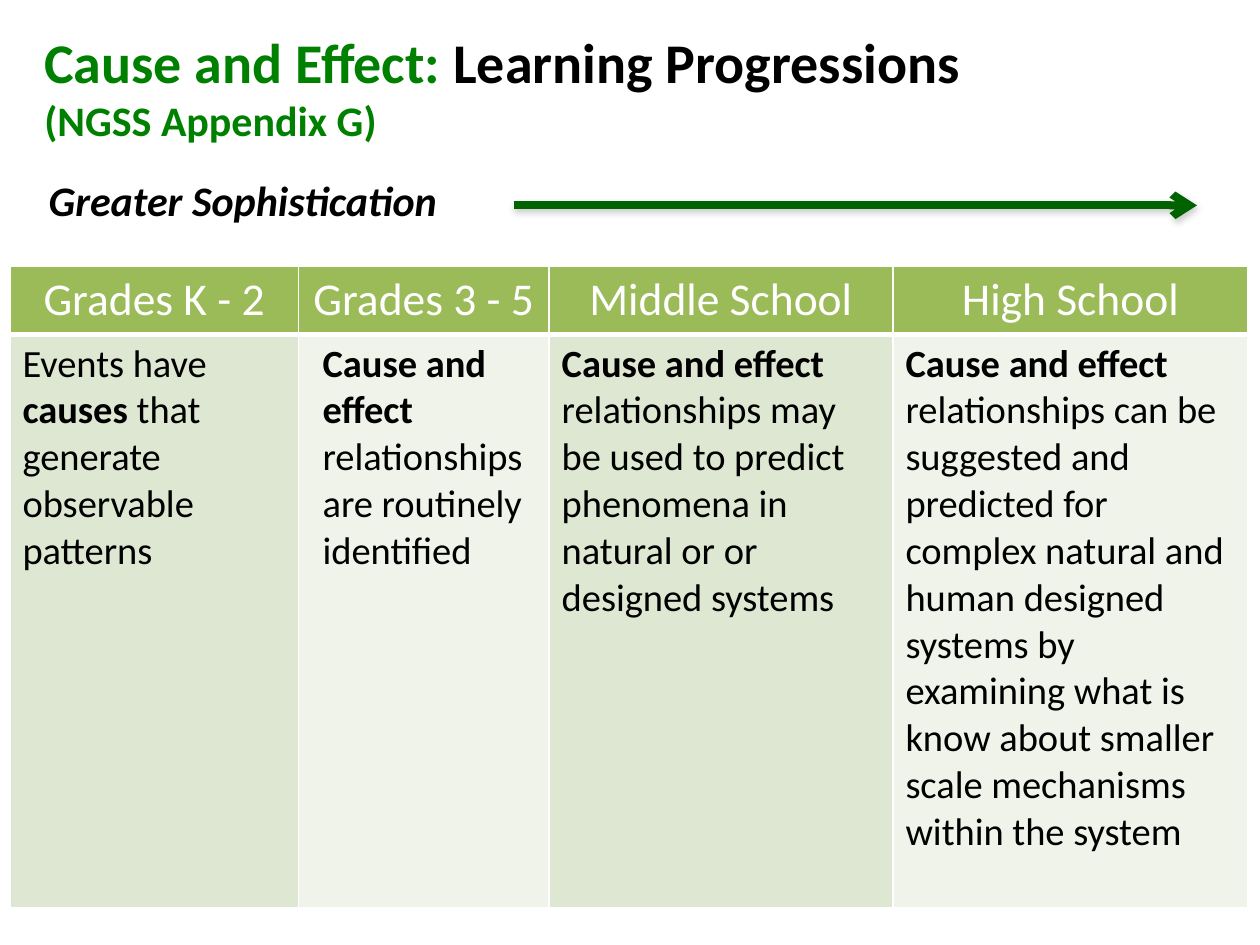
import lxml.etree
import pptx
import pptx.dml.color
import pptx.enum.shapes
import pptx.enum.text
import pptx.oxml.ns
import pptx.util

Cm = pptx.util.Cm
Pt = pptx.util.Pt
RGBColor = pptx.dml.color.RGBColor
PP_ALIGN = pptx.enum.text.PP_ALIGN
qn = pptx.oxml.ns.qn

BLACK = RGBColor(0x00, 0x00, 0x00)
WHITE = RGBColor(0xFF, 0xFF, 0xFF)
TITLE_GREEN = RGBColor(0x00, 0x80, 0x00)
ARROW_GREEN = RGBColor(0x00, 0x63, 0x00)
SHADOW_GRAY = RGBColor(0x80, 0x80, 0x80)
HEADER_GREEN = RGBColor(0x9B, 0xBB, 0x59)
COLUMN_GREENS = (RGBColor(0xDE, 0xE7, 0xD1), RGBColor(0xEF, 0xF3, 0xEA))

FONT = "Calibri"
COLUMN_WIDTHS = (5.82, 5.05, 6.93, 7.16)
HEADER_HEIGHT = 1.37
PROGRESSIONS = (
    ("Grades K - 2", (("Events have ", False), ("causes ", True),
                      ("that generate observable patterns", False)), 0),
    ("Grades 3 - 5", (("Cause and effect ", True),
                      ("relationships are routinely identified", False)), 0.23),
    ("Middle School", (("Cause and effect ", True),
                       ("relationships may be used to predict phenomena in "
                        "natural or or designed systems", False)), 0),
    ("High School", (("Cause and effect ", True),
                     ("relationships can be suggested and predicted for complex "
                      "natural and human designed systems by examining what is "
                      "know about smaller scale mechanisms within the system", False)), 0),
)


def write(paragraph, text, size, color=BLACK, bold=False, italic=False,
          align=PP_ALIGN.LEFT, indent=0):
    """Append formatted text to a paragraph."""
    paragraph.alignment = align
    properties = paragraph._p.get_or_add_pPr()
    properties.set("marL", str(Cm(indent)))
    properties.set("indent", "0")
    run = paragraph.add_run()
    run.text = text
    font = run.font
    font.name, font.size, font.bold, font.italic = FONT, Pt(size), bold, italic
    font.color.rgb = color


def style_cell(cell, fill, top, bottom):
    """Give a cell white borders and a solid fill."""
    properties = cell._tc.get_or_add_tcPr()
    for side, width in (("L", 1), ("R", 1), ("T", top), ("B", bottom)):
        border = lxml.etree.SubElement(properties, qn(f"a:ln{side}"), w=str(Pt(width)))
        solid = lxml.etree.SubElement(border, qn("a:solidFill"))
        lxml.etree.SubElement(solid, qn("a:srgbClr"), val=str(WHITE))
    cell.fill.solid()
    cell.fill.fore_color.rgb = fill


def add_heading(slide, left, top, width, height):
    """Fill the title placeholder with the topic and its reference."""
    heading = slide.shapes.title
    heading.left, heading.top = Cm(left), Cm(top)
    heading.width, heading.height = Cm(width), Cm(height)
    frame = heading.text_frame
    frame.word_wrap = True
    frame.auto_size = pptx.enum.text.MSO_AUTO_SIZE.NONE
    frame.vertical_anchor = pptx.enum.text.MSO_ANCHOR.TOP
    topic, reference = frame.paragraphs[0], frame.add_paragraph()
    write(topic, "Cause and Effect:", 32, color=TITLE_GREEN, bold=True, indent=0.64)
    write(topic, " Learning Progressions", 32, bold=True, indent=0.64)
    write(reference, "(NGSS Appendix G)", 24, color=TITLE_GREEN, bold=True, indent=0.64)


def add_sophistication(slide, left, top, width, height):
    """Place the sophistication label and the arrow to its right."""
    label = slide.shapes.add_textbox(Cm(left), Cm(top), Cm(width), Cm(height))
    label.text_frame.word_wrap = True
    write(label.text_frame.paragraphs[0], "Greater Sophistication", 24,
          bold=True, italic=True, indent=0.3)

    arrow_y = Cm(top + 0.74)
    arrow = slide.shapes.add_connector(
        pptx.enum.shapes.MSO_CONNECTOR.STRAIGHT,
        Cm(left + 9.93), arrow_y, Cm(left + width - 0.86), arrow_y)
    arrow.line.color.rgb = ARROW_GREEN
    arrow.line.width = Pt(4.5)
    lxml.etree.SubElement(arrow.line._get_or_add_ln(), qn("a:tailEnd"), type="arrow")
    effects = lxml.etree.SubElement(arrow._element.spPr, qn("a:effectLst"))
    shadow = lxml.etree.SubElement(
        effects, qn("a:outerShdw"), blurRad=str(Pt(3.1)), dist=str(Pt(1.6)),
        dir="5400000", rotWithShape="0")
    shade = lxml.etree.SubElement(shadow, qn("a:srgbClr"), val=str(SHADOW_GRAY))
    lxml.etree.SubElement(shade, qn("a:alpha"), val="38000")


def add_progressions(slide, left, top, width, height):
    """Build the table of progressions by grade band."""
    table = slide.shapes.add_table(
        2, len(PROGRESSIONS), Cm(left), Cm(top), Cm(width), Cm(height)).table
    table.rows[0].height = Cm(HEADER_HEIGHT)
    table.rows[1].height = Cm(height - HEADER_HEIGHT)
    for index, (grades, statement, indent) in enumerate(PROGRESSIONS):
        table.columns[index].width = Cm(COLUMN_WIDTHS[index])
        header, body = table.cell(0, index), table.cell(1, index)
        style_cell(header, HEADER_GREEN, top=1, bottom=3)
        style_cell(body, COLUMN_GREENS[index % 2], top=3, bottom=1)
        write(header.text_frame.paragraphs[0], grades, 26, color=WHITE,
              align=PP_ALIGN.CENTER)
        for text, bold in statement:
            write(body.text_frame.paragraphs[0], text, 22, bold=bold, indent=indent)


def main():
    """Build and save the slide."""
    deck = pptx.Presentation()
    deck.slide_width, deck.slide_height = Cm(25.4), Cm(19.05)
    slide = deck.slides.add_slide(deck.slide_layouts[5])
    add_progressions(slide, 0.2, 5.36, sum(COLUMN_WIDTHS), 12.93)
    add_heading(slide, 0, 0.43, 25.4, 4.01)
    add_sophistication(slide, 0.43, 3.4, 24.56, 1.27)
    deck.save("out.pptx")


if __name__ == "__main__":
    main()
